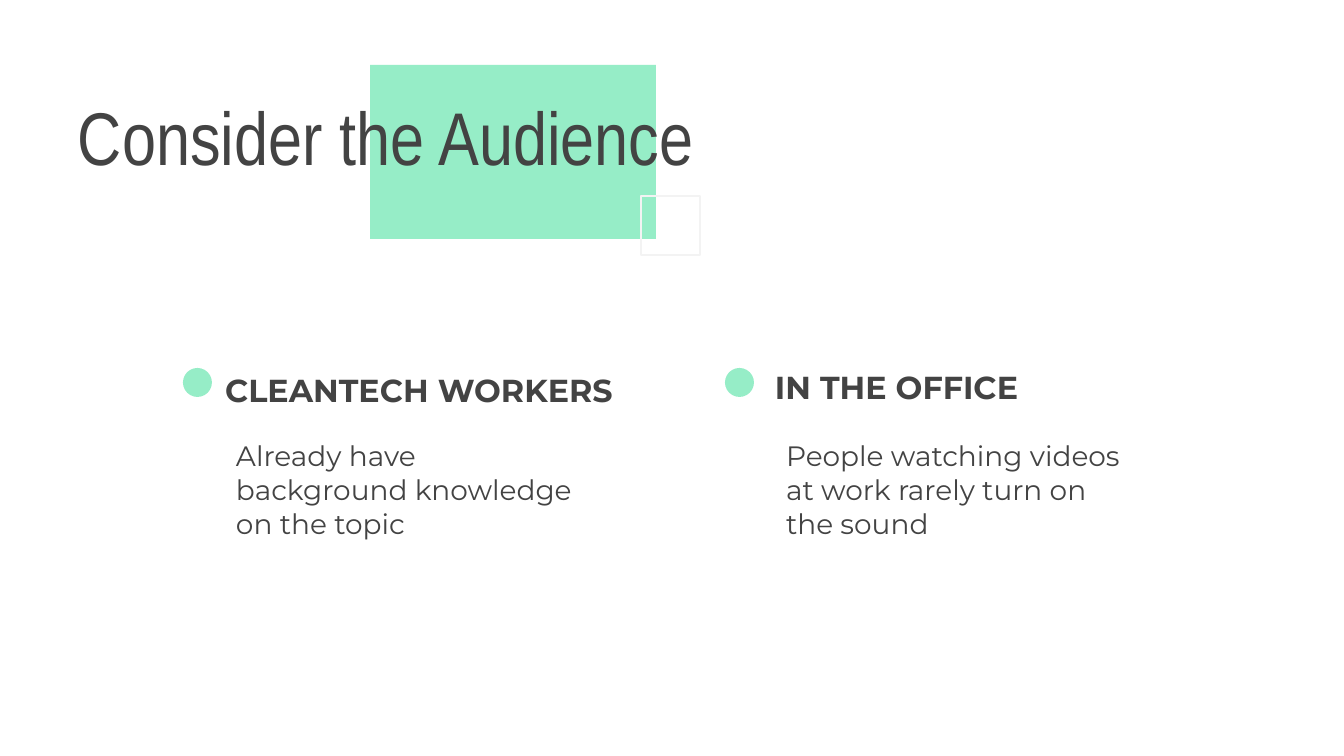
import pptx
import pptx.util
import pptx.dml.color
import pptx.enum.shapes
import pptx.enum.text

RGBColor = pptx.dml.color.RGBColor
SHAPES = pptx.enum.shapes.MSO_SHAPE
MINT = RGBColor(0x96, 0xED, 0xC7)
PALE_GRAY = RGBColor(0xF3, 0xF3, 0xF3)
CHARCOAL = RGBColor(0x43, 0x43, 0x43)

EMU_PER_PX = 914400 / 134.4
INSET = 13
DOT_SIZE, DOT_TOP = 29, 368
BODY_TOP = 426

TITLE = "Consider the Audience"
# Each audience: dot left, heading, heading box, body, body left, body width
AUDIENCES = [
    (183, "CLEANTECH WORKERS", (212, 352, 442, 73),
     "Already have background knowledge on the topic", 223, 384),
    (725, "IN THE OFFICE", (762, 349, 430, 66),
     "People watching videos at work rarely turn on the sound", 773, 368),
]


def px(length):
    return pptx.util.Emu(round(length * EMU_PER_PX))


def add_shape(slide, preset, box, fill=None, line=None):
    shape = slide.shapes.add_shape(preset, *map(px, box))
    shape.shadow.inherit = False
    if fill is None:
        shape.fill.background()
    else:
        shape.fill.solid()
        shape.fill.fore_color.rgb = fill
    if line is None:
        shape.line.fill.background()
    else:
        shape.line.color.rgb = line
        shape.line.width = pptx.util.Pt(1.5)


def add_text(slide, text, box, font, size, bold=False, spacing=1.0, after=0):
    frame = slide.shapes.add_textbox(*map(px, box)).text_frame
    frame.word_wrap = True
    frame.vertical_anchor = pptx.enum.text.MSO_ANCHOR.TOP
    frame.margin_left = frame.margin_right = px(INSET)
    frame.margin_top = frame.margin_bottom = px(INSET)
    frame.text = text
    paragraph = frame.paragraphs[0]
    paragraph.line_spacing = spacing
    paragraph.space_after = pptx.util.Pt(after)
    run = paragraph.runs[0]
    run.font.name = font
    run.font.size = pptx.util.Pt(size)
    run.font.bold = bold
    run.font.color.rgb = CHARCOAL


def main():
    deck = pptx.Presentation()
    deck.slide_width, deck.slide_height = px(1344), px(756)
    slide = deck.slides.add_slide(deck.slide_layouts[6])

    add_shape(slide, SHAPES.RECTANGLE, (370, 65, 286, 174), fill=MINT)
    add_shape(slide, SHAPES.RECTANGLE, (641, 196, 59, 59), line=PALE_GRAY)
    add_text(slide, TITLE, (65, 78, 669, 200), "Arial Narrow", 40)

    for dot_left, heading, heading_box, body, body_left, body_width in AUDIENCES:
        add_shape(slide, SHAPES.OVAL, (dot_left, DOT_TOP, DOT_SIZE, DOT_SIZE), fill=MINT)
        add_text(slide, heading, heading_box, "Montserrat", 17,
                 bold=True, spacing=1.15, after=16)
        add_text(slide, body, (body_left, BODY_TOP, body_width, 124),
                 "Montserrat", 15, after=16)

    deck.save("out.pptx")


if __name__ == "__main__":
    main()
